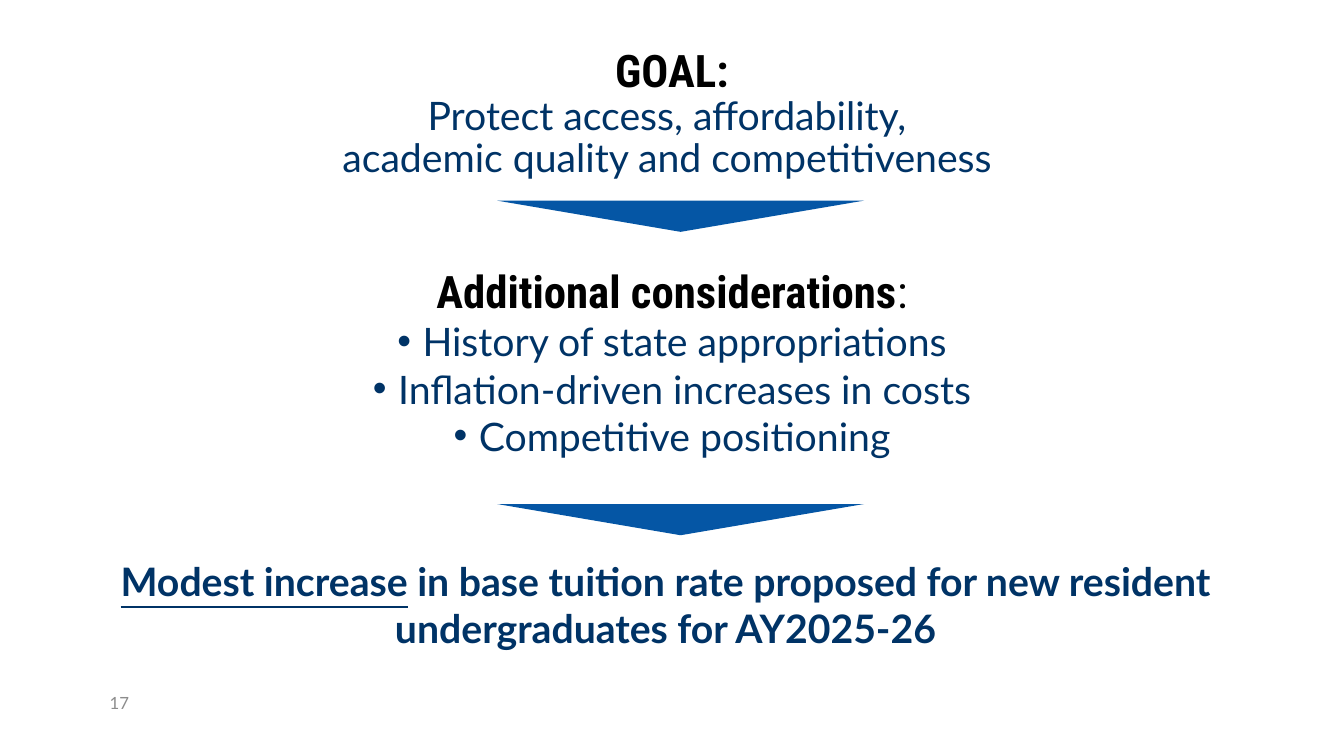
from lxml import etree
from pptx import Presentation, util as u
from pptx.dml.color import RGBColor
from pptx.enum import shapes, text
from pptx.oxml import ns

WIDTH, HEIGHT = 13.33, 7.5
NAVY, BLUE, BLACK, GREY = "003366", "0556A5", "000000", "8C8C8C"
HEADING = dict(size=32, font="Roboto Condensed", color=BLACK, bold=True)
BODY = dict(size=28, font="Lato", color=NAVY)

deck = Presentation()
deck.slide_width, deck.slide_height = u.Inches(WIDTH), u.Inches(HEIGHT)
page = deck.slides.add_slide(deck.slide_layouts[6])


def add_box(left, top, width, height):
    box = page.shapes.add_textbox(*map(u.Inches, (left, top, width, height)))
    box.text_frame.word_wrap = True
    return box.text_frame


def add_text(para, words, size, font, color, bold=False, underline=False,
             align=text.PP_ALIGN.CENTER):
    para.alignment = align
    for index, line in enumerate(words.split("\n")):
        if index:
            para.add_line_break()
        span = para.add_run()
        span.text = line
        span.font.size = u.Pt(size)
        span.font.name = font
        span.font.bold = bold
        span.font.underline = underline
        span.font.color.rgb = RGBColor.from_string(color)


# Goal
goal = add_box(0, 0.48, WIDTH, 1.5)
goal.margin_top = 0
add_text(goal.paragraphs[0], "GOAL:", **HEADING)
statement = goal.add_paragraph()
add_text(statement, "Protect access, affordability, \n"
         "academic quality and competitiveness ", **BODY)
for para in goal.paragraphs:
    para.line_spacing = 0.9

# Additional considerations
considerations = add_box(0, 2.57, WIDTH, 2.36)
title = considerations.paragraphs[0]
add_text(title, "Additional considerations", **HEADING)
add_text(title, ":", **{**HEADING, "bold": False})
for item in ("History of state appropriations",
             "Inflation-driven increases in costs",
             "Competitive positioning"):
    para = considerations.add_paragraph()
    props = para._p.get_or_add_pPr()
    props.set("marL", str(u.Inches(0.25)))
    props.set("indent", str(-u.Inches(0.25)))
    etree.SubElement(props, ns.qn("a:buFont")).set("typeface", "Arial")
    etree.SubElement(props, ns.qn("a:buChar")).set("char", "•")
    add_text(para, item, **BODY)

# Proposal
proposal = add_box(0.99, 5.48, 11.22, 1.2).paragraphs[0]
add_text(proposal, "Modest increase", bold=True, underline=True, **BODY)
add_text(proposal, " in base tuition rate proposed for new resident "
         "undergraduates for AY2025-26", bold=True, **BODY)

# Downward pointers between the parts
for top in (1.99, 5):
    pointer = page.shapes.add_shape(
        shapes.MSO_SHAPE.ISOSCELES_TRIANGLE,
        *map(u.Inches, (4.93, top, 3.64, 0.31)))
    pointer.rotation = 180
    pointer.shadow.inherit = False
    pointer.fill.solid()
    pointer.fill.fore_color.rgb = RGBColor.from_string(BLUE)
    pointer.line.fill.background()

# Page number
number = add_box(0.99, 6.82, 3, 0.4).paragraphs[0]
add_text(number, "17", size=12, font="Lato", color=GREY,
         align=text.PP_ALIGN.LEFT)

deck.save("out.pptx")
